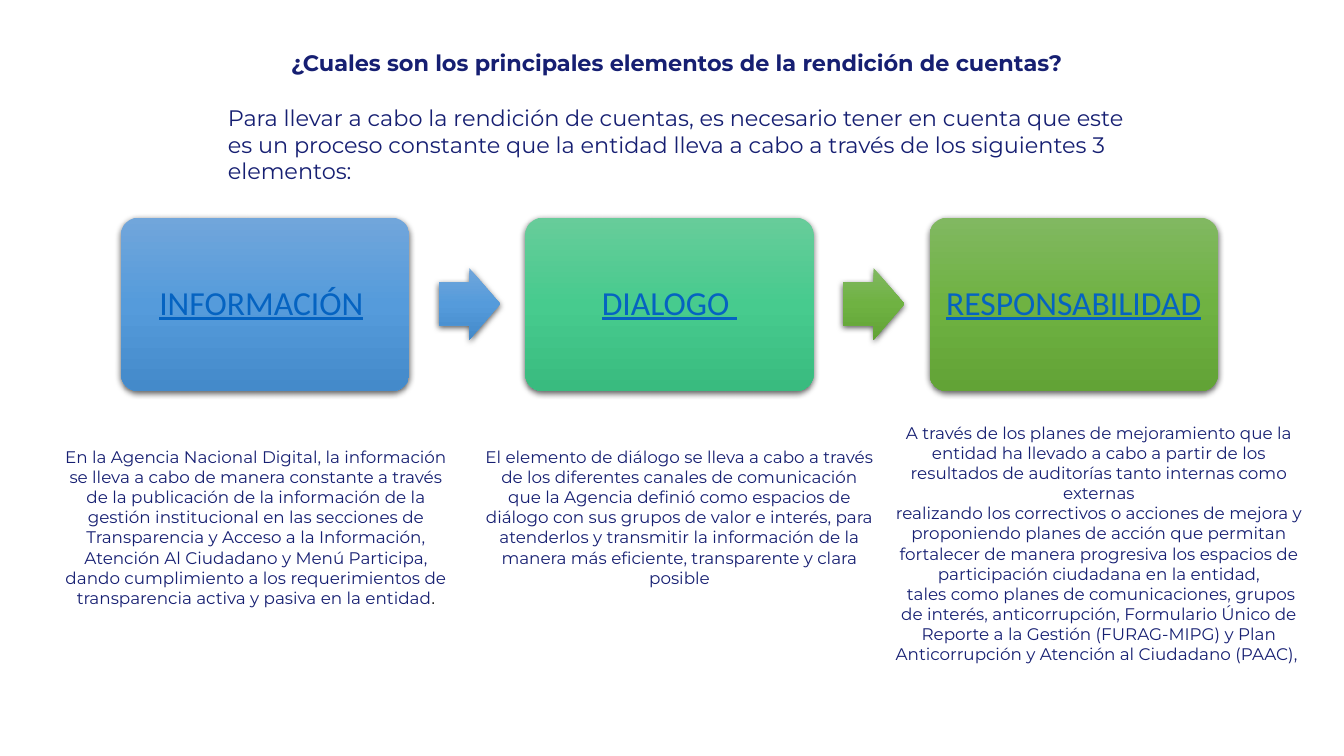
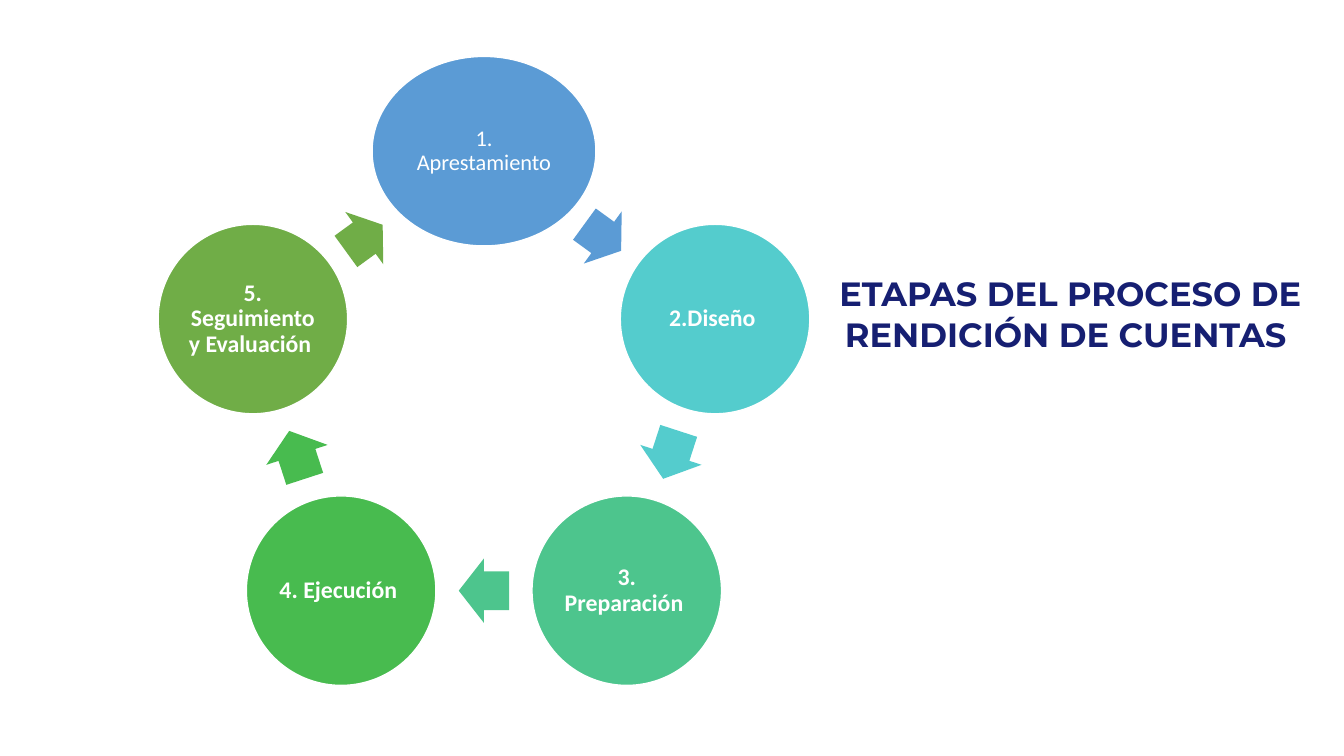
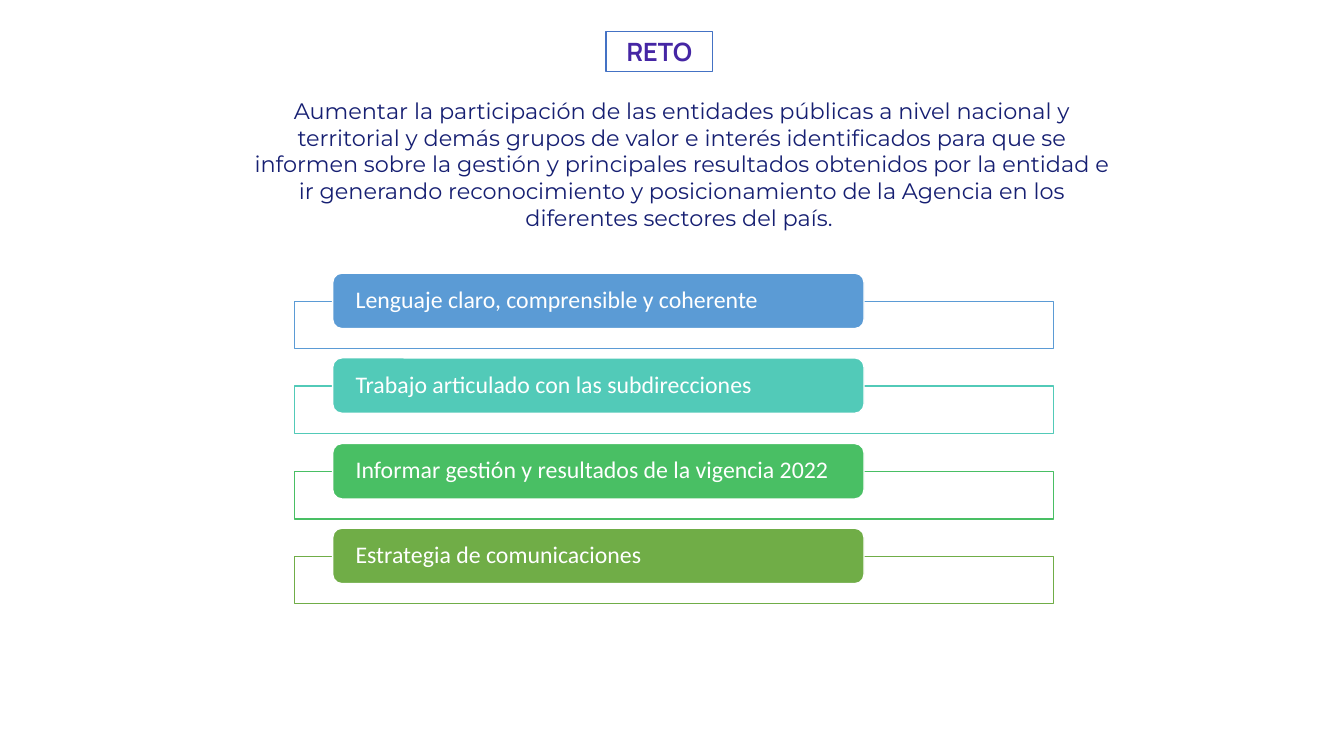
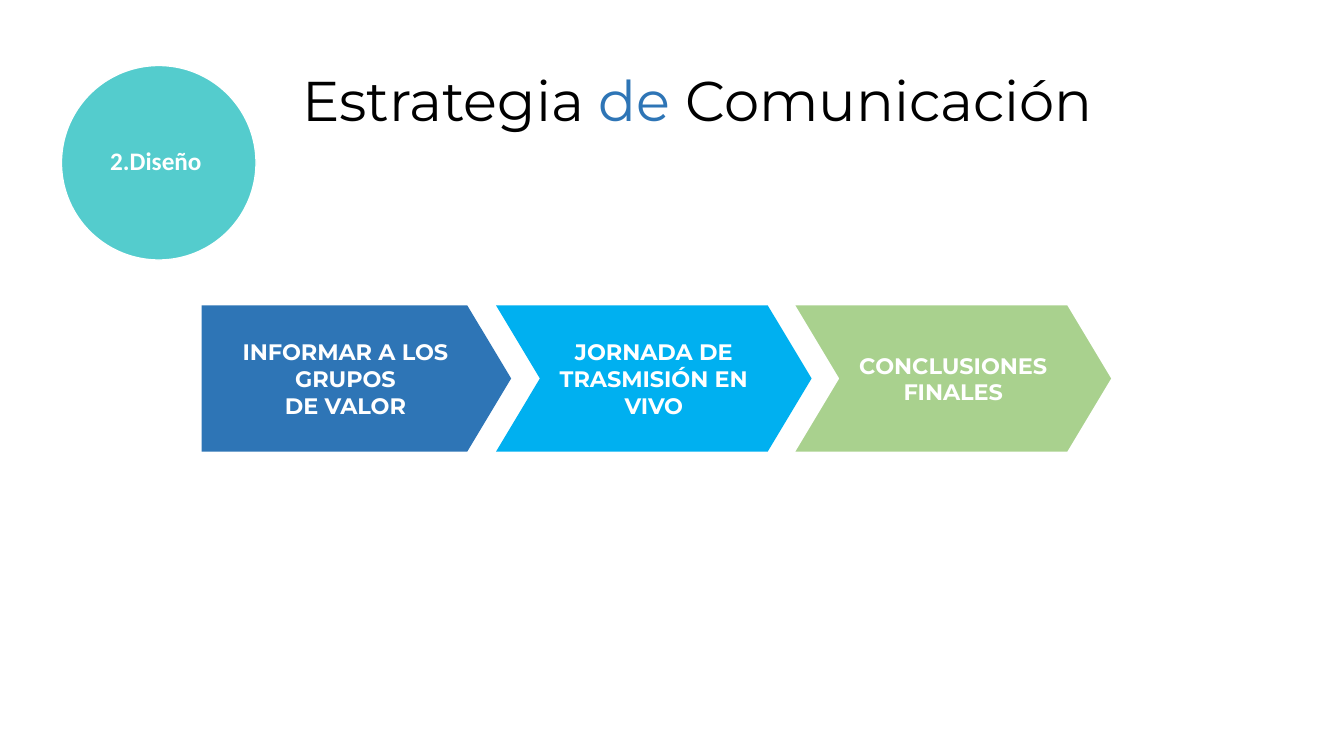
"""Build four slides on the elements, stages and challenge of public accountability."""
import copy
import math

import lxml.etree
import pptx
import pptx.dml.color
import pptx.enum.shapes
import pptx.enum.text
import pptx.oxml.ns
import pptx.util

PX = 9144
NAVY, WHITE, LINK, TEAL, BLUE, GREEN = "161F72", "FFFFFF", "0563C1", "54CCCD", "5B9BD5", "70AD47"
rgb = pptx.dml.color.RGBColor.from_string
qn = pptx.oxml.ns.qn
MSO = pptx.enum.shapes.MSO_SHAPE
ALIGN = pptx.enum.text.PP_ALIGN
ANCHOR = pptx.enum.text.MSO_ANCHOR


def draw(s, kind, box, fill, line=None, adj=(), rot=0):
    """Add a preset shape; a list as fill makes a vertical gradient with a soft shadow."""
    sp = s.shapes.add_shape(kind, *[round(v * PX) for v in box])
    sp.shadow.inherit = False
    sp.rotation = rot
    for i, value in enumerate(adj):
        sp.adjustments[i] = value
    if isinstance(fill, list):
        sp.fill.gradient()
        sp.fill.gradient_angle = 270
        stops = sp._element.spPr.find(".//" + qn("a:gsLst"))
        stops.insert(1, copy.deepcopy(stops[0]))
        for stop, color, position in zip(sp.fill.gradient_stops, fill, (0, 0.5, 1)):
            stop.color.rgb = rgb(color)
            stop.position = position
        effects = sp._element.spPr.find(qn("a:effectLst"))
        shadow = lxml.etree.SubElement(effects, qn("a:outerShdw"), blurRad="57150",
                                       dist="19050", dir="5400000", rotWithShape="0")
        black = lxml.etree.SubElement(shadow, qn("a:srgbClr"), val="000000")
        lxml.etree.SubElement(black, qn("a:alpha"), val="63000")
    else:
        sp.fill.solid()
        sp.fill.fore_color.rgb = rgb(fill)
    if line:
        sp.line.color.rgb = rgb(line)
        sp.line.width = pptx.util.Pt(1)
    else:
        sp.line.fill.background()
    return sp


def write(sp, paras, size, color=NAVY, font="Montserrat", bold=False, align=ALIGN.CENTER,
          anchor=ANCHOR.TOP, inset=(10, 5), spacing=1.0, box=None):
    """Fill a shape with paragraphs, each a string or a list of (text, style) runs."""
    if box:
        sp.left, sp.top, sp.width, sp.height = [v * PX for v in box]
    tf = sp.text_frame
    tf.word_wrap = True
    tf.auto_size = pptx.enum.text.MSO_AUTO_SIZE.NONE
    tf.vertical_anchor = anchor
    tf.margin_left = tf.margin_right = inset[0] * PX
    tf.margin_top = tf.margin_bottom = inset[1] * PX
    for i, runs in enumerate(paras):
        p = tf.add_paragraph() if i else tf.paragraphs[0]
        p.alignment = align
        p.line_spacing = spacing
        p.space_before = pptx.util.Pt(0)
        if sp.is_placeholder:
            pPr = p._p.get_or_add_pPr()
            pPr.set("marL", "0")
            pPr.set("indent", "0")
            lxml.etree.SubElement(pPr, qn("a:buNone"))
        for text, style in [(runs, {})] if isinstance(runs, str) else runs:
            r = p.add_run()
            r.text = text
            r.font.size = pptx.util.Pt(size)
            r.font.bold = bold
            r.font.name = style.get("font", font)
            r.font.color.rgb = rgb(style.get("color", color))
            r.font.underline = style.get("underline", False)


prs = pptx.Presentation()
prs.slide_width, prs.slide_height = 1333 * PX, 750 * PX
TITLE_BODY, TITLE_ONLY = prs.slide_layouts[1], prs.slide_layouts[5]
LABEL = dict(color=WHITE, font="Calibri", anchor=ANCHOR.MIDDLE, spacing=0.9)

s = prs.slides.add_slide(TITLE_BODY)
write(s.shapes.title, ["¿Cuales son los principales elementos de la rendición de cuentas? "],
      16, bold=True, box=(216, 44, 917, 37))
write(s.placeholders[1], [
    "Para llevar a cabo la rendición de cuentas, es necesario tener en cuenta que este es un "
    "proceso constante que la entidad lleva a cabo a través de los siguientes 3 elementos:"],
    16, align=ALIGN.LEFT, box=(216, 98, 917, 91))

blue_fade = ["71A6DB", "559BDB", "448ACA"]
mint_fade = ["67CC9A", "47CB8E", "39BB7F"]
green_fade = ["81B861", "6FB242", "62A336"]
link = {"color": LINK, "underline": True}
elements = [
    ([("INFORMACIÓN", link), (" ", {})], blue_fade, blue_fade),
    ([("DIALOGO ", link)], mint_fade, green_fade),
    ([("RESPONSABILIDAD", link), (" ", {})], green_fade, None),
]
for i, (name, fade, arrow_fade) in enumerate(elements):
    left = 120 + 401 * i
    sp = draw(s, MSO.ROUNDED_RECTANGLE, (left, 216, 286, 172), fade, adj=[0.1])
    write(sp, [name], 24, inset=(10, 10), **LABEL)
    if arrow_fade:
        draw(s, MSO.RIGHT_ARROW, (left + 315, 266, 61, 71), arrow_fade, adj=[0.6, 0.5])

descriptions = [
    ((51, 438, 406, 178), [[
        ("En la Agencia Nacional Digital, la información se lleva a cabo de manera constante a "
         "través de la publicación de la información de la gestión institucional en las "
         "secciones de Transparencia y Acceso a la Información, Atención Al Ciudadano y Menú "
         "Participa, dando cumplimiento a los requerimientos de transparencia activa y pasiva "
         "en la entidad", {}),
        (".", {"font": "Arial Narrow", "color": "000000"})]]),
    ((471, 438, 406, 131), [
        "El elemento de diálogo se lleva a cabo a través de los diferentes canales de "
        "comunicación que la Agencia definió como espacios de diálogo con sus grupos de valor "
        "e interés, para atenderlos y transmitir la información de la manera más eficiente, "
        "transparente y clara posible"]),
    ((876, 414, 428, 232), [
        "A través de los planes de mejoramiento que la entidad ha llevado a cabo a partir de "
        "los resultados de auditorías tanto internas como externas",
        "realizando los correctivos o acciones de mejora y proponiendo planes de acción que "
        "permitan fortalecer de manera progresiva los espacios de participación ciudadana en "
        "la entidad,",
        " tales como planes de comunicaciones, grupos de interés, anticorrupción, Formulario "
        "Único de Reporte a la Gestión (FURAG-MIPG) y Plan Anticorrupción y Atención al "
        "Ciudadano (PAAC), "]),
]
for box, paras in descriptions:
    write(s.shapes.add_textbox(0, 0, 0, 0), paras, 12, box=box)

s = prs.slides.add_slide(TITLE_ONLY)
write(s.shapes.title, ["ETAPAS DEL PROCESO DE RENDICIÓN DE CUENTAS "], 24, bold=True,
      box=(810, 266, 503, 91))
stages = [
    ("1. Aprestamiento", BLUE, 222, 16, 45, 4),
    ("2.Diseño ", TEAL, 188, 17, 50, 0),
    ("3. Preparación ", "4DC58D", 188, 17, 50, 0),
    ("4. Ejecución ", "48BB4F", 188, 17, 50, 0),
    ("5. Seguimiento y Evaluación ", GREEN, 188, 17, 45, -5),
]
radius, mid_x, mid_y = 241, 480, 391
for i, (name, color, width, size, arrow_width, shift) in enumerate(stages):
    angle = math.radians(72 * i - 90)
    x, y = mid_x + radius * math.cos(angle), mid_y + radius * math.sin(angle)
    sp = draw(s, MSO.OVAL, (x - width / 2, y - 94, width, 188), color, WHITE)
    write(sp, [name], size, bold=i > 0, inset=(2, 2), **LABEL)
    heading = 36 + 72 * i
    angle, turn = math.radians(heading - 90), math.radians(heading)
    reach = radius * math.cos(math.radians(36))
    x = mid_x + reach * math.cos(angle) + shift * math.cos(turn)
    y = mid_y + reach * math.sin(angle) + shift * math.sin(turn)
    draw(s, MSO.RIGHT_ARROW, (x - arrow_width / 2, y - 32, arrow_width, 64), color,
         adj=[0.6, 0.5], rot=heading)

s = prs.slides.add_slide(TITLE_BODY)
title = s.shapes.title
write(title, ["RETO"], 18, "4526A4", "Manrope", bold=True, box=(601, 31, 106, 40))
title.fill.solid()
title.fill.fore_color.rgb = rgb(WHITE)
title.line.color.rgb = rgb("4472C4")
title.line.width = pptx.util.Pt(1)
write(s.placeholders[1], [
    "Aumentar la participación de las entidades públicas a nivel nacional y territorial y demás "
    "grupos de valor e interés identificados para que se informen sobre la gestión y principales "
    "resultados obtenidos por la entidad e ir generando reconocimiento y posicionamiento de la "
    "Agencia en los diferentes sectores del país. "], 16, box=(234, 91, 885, 145))
goals = [
    ("Lenguaje claro, comprensible y coherente", BLUE),
    ("Trabajo articulado con las subdirecciones", "52CAB8"),
    ("Informar gestión y resultados de la vigencia 2022", "49BF64"),
    ("Estrategia de comunicaciones", GREEN),
]
for i, (goal, color) in enumerate(goals):
    top = 271 + round(84.4 * i)
    sp = draw(s, MSO.RECTANGLE, (292, top + 28, 753, 47), WHITE, color)
    lxml.etree.SubElement(sp._element.spPr.find(qn("a:solidFill"))[0], qn("a:alpha"), val="90000")
    sp = draw(s, MSO.ROUNDED_RECTANGLE, (330, top, 527, 55), color, WHITE)
    write(sp, [goal], 17, align=ALIGN.LEFT, inset=(20, 0), **LABEL)

s = prs.slides.add_slide(TITLE_ONLY)
write(s.shapes.title, [[("Estrategia ", {}), ("de", {"color": "2E75B6"}), (" Comunicación", {})]],
      40, "000000", anchor=ANCHOR.BOTTOM, inset=(10, 10), spacing=0.9, box=(196, 65, 992, 78))
sp = draw(s, MSO.OVAL, (61, 65, 193, 193), TEAL, WHITE)
write(sp, ["2.Diseño "], 18, bold=True, inset=(3, 3), **LABEL)
steps = [
    (MSO.PENTAGON, 200, 307, "2E75B6", ["INFORMAR A LOS GRUPOS", "DE VALOR"]),
    (MSO.CHEVRON, 492, 313, "00B0F0", ["JORNADA DE TRASMISIÓN EN VIVO"]),
    (MSO.CHEVRON, 789, 313, "A9D18E", ["CONCLUSIONES", "FINALES"]),
]
for kind, left, width, color, paras in steps:
    sp = draw(s, kind, (left, 303, width, 145), color, adj=[0.3])
    write(sp, paras, 16, WHITE, bold=True, anchor=ANCHOR.MIDDLE, inset=(10, 10))

prs.save("out.pptx")
